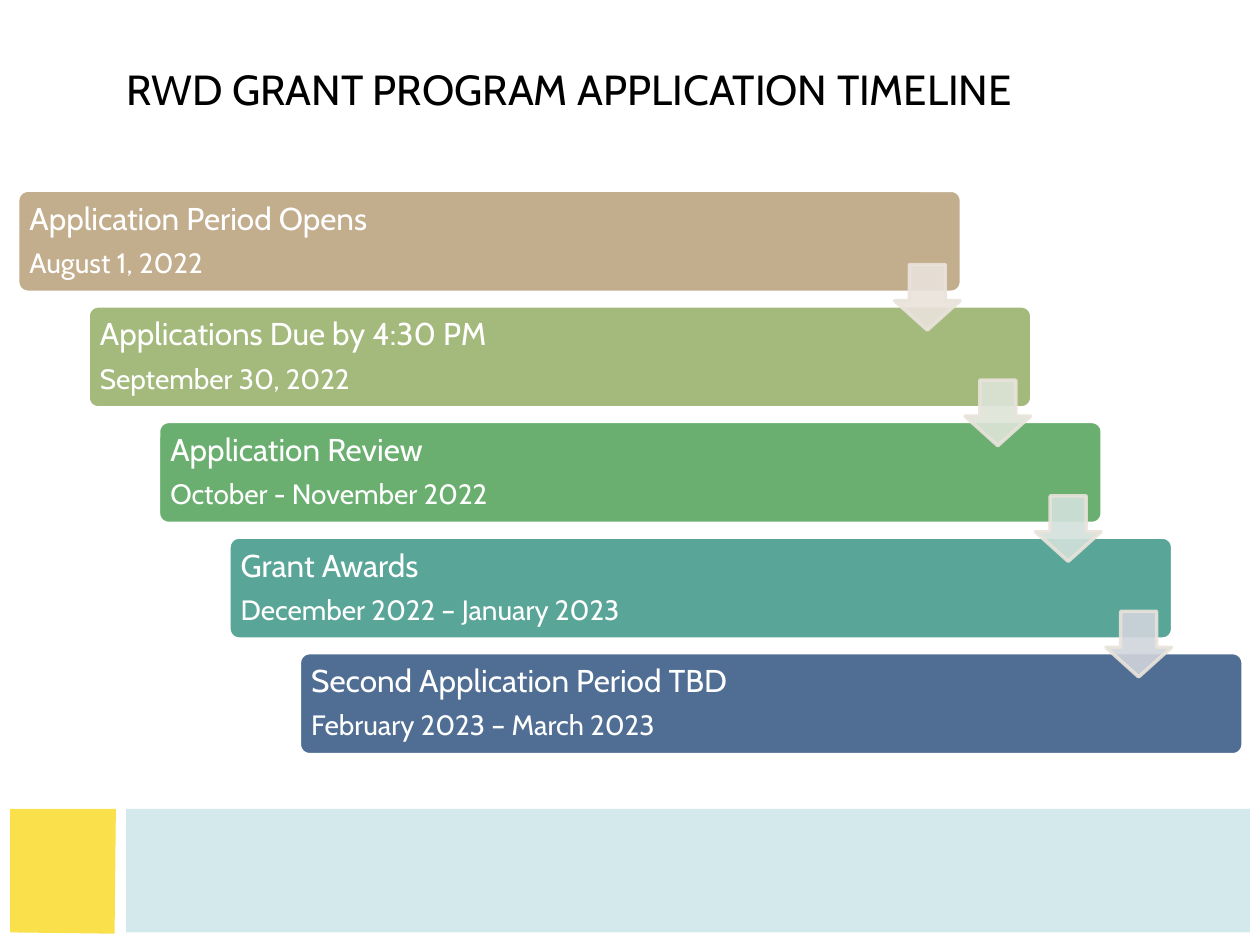
from lxml import etree
from pptx import Presentation
from pptx.dml.color import RGBColor
from pptx.enum.shapes import MSO_SHAPE
from pptx.enum.text import MSO_ANCHOR, PP_ALIGN
from pptx.oxml.ns import qn
from pptx.util import Pt

TITLE = "RWD GRANT PROGRAM APPLICATION TIMELINE"
STAGES = [
    ("Application Period Opens", "August 1, 2022", "C2AD8D"),
    ("Applications Due by 4:30 PM", "September 30, 2022", "A4B97C"),
    ("Application Review", "October - November 2022", "6AAF70"),
    ("Grant Awards", "December 2022 – January 2023", "59A698"),
    ("Second Application Period TBD", "February 2023 – March 2023", "506E94"),
]
ARROW_FILLS = ["E9E3DB", "DDE5D7", "D3E1DC", "D0D5DC"]
THEME = {
    "font": "Cabin",
    "title_size": 24, "stage_size": 18, "date_size": 16,
    "title": "000000", "text": "FFFFFF", "bar_line": "FFFFFF",
    "arrow_line": "E9E3DB", "yellow": "FAE04B", "blue": "C8E4E8",
}
# Outline points, fill name and opacity in percent
FOOTER = [
    ([(8, 642), (92, 642), (91, 741), (8, 740)], "yellow", 100),
    ([(100, 642), (992, 642), (992, 740), (100, 740)], "blue", 80),
]

SCALE = 9144  # EMU per px, 100 px to the inch
SLIDE_SIZE = (1000, 750)
TITLE_BOX = (90, 40, 822, 60)
BAR_ORIGIN, BAR_SIZE, STEP = (14, 151), (749, 81), (55.9, 91.75)
ARROW_OFFSET, ARROW_SIZE = (696, 59), (52, 52)
INSET = 7

ROUNDED, DOWN_ARROW = MSO_SHAPE.ROUNDED_RECTANGLE, MSO_SHAPE.DOWN_ARROW
LEFT, MIDDLE = PP_ALIGN.LEFT, MSO_ANCHOR.MIDDLE


def px(value):
    return round(value * SCALE)


def set_format(target, values):
    for name, value in values.items():
        setattr(target, name, value)


def paint(fill, color, opacity=100):
    fill.solid()
    fill.fore_color.rgb = RGBColor.from_string(color)
    if opacity < 100:
        # The colour element is reached through the owner of the fill
        node = fill._xPr.find(qn("a:solidFill"))[0]
        etree.SubElement(node, qn("a:alpha"), val=str(opacity * 1000))


def write(para, text, size, color):
    para.alignment = LEFT
    span = para.add_run()
    span.text = text
    set_format(span.font, {"name": THEME["font"], "size": Pt(size), "bold": False})
    span.font.color.rgb = RGBColor.from_string(color)


def add_preset(page, kind, place, adjustments, fill, line, opacity=100):
    shape = page.shapes.add_shape(kind, *map(px, place))
    shape.shadow.inherit = False
    for index, value in enumerate(adjustments):
        shape.adjustments[index] = value
    paint(shape.fill, fill, opacity)
    paint(shape.line.fill, line, opacity)
    shape.line.width = Pt(2)
    return shape


def add_title(page):
    title = page.shapes.title
    set_format(title, dict(zip(("left", "top", "width", "height"), map(px, TITLE_BOX))))
    set_format(title.text_frame, {"vertical_anchor": MIDDLE, "word_wrap": True})
    write(title.text_frame.paragraphs[0], TITLE, THEME["title_size"], THEME["title"])


def add_footer(page):
    for points, color, opacity in FOOTER:
        builder = page.shapes.build_freeform(*points[0], scale=SCALE)
        builder.add_line_segments(points[1:], close=True)
        block = builder.convert_to_shape()
        block.shadow.inherit = False
        paint(block.fill, THEME[color], opacity)
        block.line.fill.background()


def add_stage(page, corner, stage, date, color):
    bar = add_preset(page, ROUNDED, (*corner, *BAR_SIZE), [0.1], color, THEME["bar_line"])
    frame = bar.text_frame
    margins = {f"margin_{side}": px(INSET) for side in ("left", "top", "right", "bottom")}
    set_format(frame, {"vertical_anchor": MIDDLE, "word_wrap": True, **margins})
    heading, detail = frame.paragraphs[0], frame.add_paragraph()
    heading.line_spacing = detail.line_spacing = 0.9
    heading.space_after = Pt(7)
    write(heading, stage, THEME["stage_size"], THEME["text"])
    write(detail, date, THEME["date_size"], THEME["text"])


def main():
    deck = Presentation()
    deck.slide_width, deck.slide_height = map(px, SLIDE_SIZE)
    page = deck.slides.add_slide(deck.slide_layouts[5])
    add_footer(page)
    add_title(page)

    corners = [
        tuple(start + step * index for start, step in zip(BAR_ORIGIN, STEP))
        for index in range(len(STAGES))
    ]
    for corner, stage in zip(corners, STAGES):
        add_stage(page, corner, *stage)
    for (left, top), color in zip(corners, ARROW_FILLS):
        place = (left + ARROW_OFFSET[0], top + ARROW_OFFSET[1], *ARROW_SIZE)
        # A down arrow lists its shaft width first, then its head length
        add_preset(page, DOWN_ARROW, place, [0.55, 0.45], color, THEME["arrow_line"], 90)
    deck.save("out.pptx")


if __name__ == "__main__":
    main()
